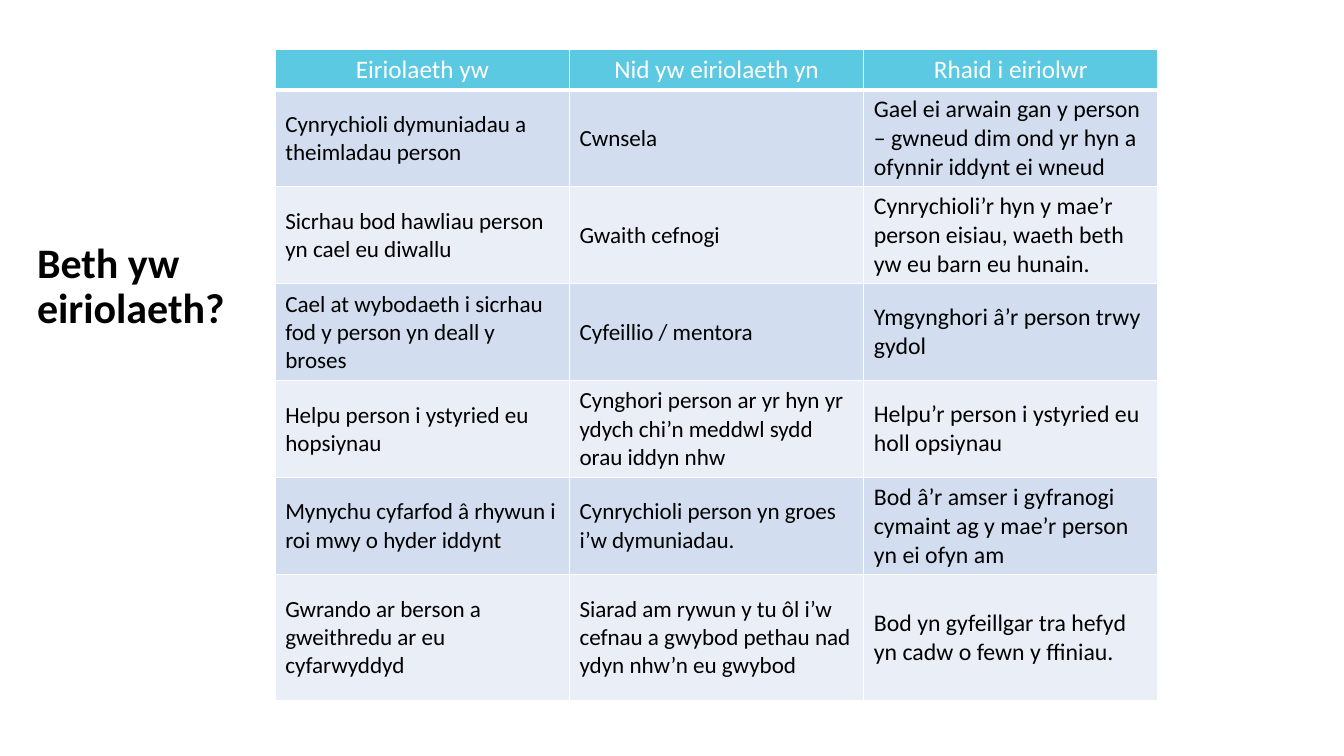
"""Build a slide that explains advocacy in a three-column table."""
from lxml import etree
from pptx import Presentation
from pptx.dml.color import RGBColor
from pptx.enum import text
from pptx.oxml import ns
from pptx.util import Pt

BLACK = RGBColor(0x00, 0x00, 0x00)
WHITE = RGBColor(0xFF, 0xFF, 0xFF)
HEADER_BLUE = RGBColor(0x5C, 0xC9, 0xE3)
BANDS = [RGBColor(0xEA, 0xEF, 0xF7), RGBColor(0xD2, 0xDE, 0xEF)]

ROWS = [
    ["Eiriolaeth yw", "Nid yw eiriolaeth yn", "Rhaid i eiriolwr"],
    ["Cynrychioli dymuniadau a theimladau person", "Cwnsela",
     "Gael ei arwain gan y person – gwneud dim ond yr hyn a ofynnir iddynt ei wneud"],
    ["Sicrhau bod hawliau person yn cael eu diwallu", "Gwaith cefnogi",
     "Cynrychioli’r hyn y mae’r person eisiau, waeth beth yw eu barn eu hunain."],
    ["Cael at wybodaeth i sicrhau fod y person yn deall y broses", "Cyfeillio / mentora",
     "Ymgynghori â’r person trwy gydol"],
    ["Helpu person i ystyried eu hopsiynau",
     "Cynghori person ar yr hyn yr ydych chi’n meddwl sydd orau iddyn nhw",
     "Helpu’r person i ystyried eu holl opsiynau"],
    ["Mynychu cyfarfod â rhywun i roi mwy o hyder iddynt",
     "Cynrychioli person yn groes i’w dymuniadau.",
     "Bod â’r amser i gyfranogi cymaint ag y mae’r person yn ei ofyn am"],
    ["Gwrando ar berson a gweithredu ar eu cyfarwyddyd",
     "Siarad am rywun y tu ôl i’w cefnau a gwybod pethau nad ydyn nhw’n eu gwybod",
     "Bod yn gyfeillgar tra hefyd yn cadw o fewn y ffiniau."],
]
ROW_HEIGHTS = [28.3] + [69.3] * 5 + [90]
COLUMN_WIDTH = 210.2
BODY_SIZES = [16.5, 16.5, 17]


def format_paragraph(paragraph, size, color, bold=False):
    values = {"name": "Calibri", "size": Pt(size), "bold": bold}
    for name, value in values.items():
        setattr(paragraph.font, name, value)
    paragraph.font.color.rgb = color


def add_borders(cell, bottom_width):
    properties = cell._tc.get_or_add_tcPr()
    widths = {"lnL": 1, "lnR": 1, "lnT": 1, "lnB": bottom_width}
    for side, width in widths.items():
        line = etree.SubElement(properties, ns.qn(f"a:{side}"), w=str(Pt(width)))
        fill = etree.SubElement(line, ns.qn("a:solidFill"))
        etree.SubElement(fill, ns.qn("a:srgbClr"), val=str(WHITE))


presentation = Presentation()
presentation.slide_width = Pt(960)
presentation.slide_height = Pt(540)
slide = presentation.slides.add_slide(presentation.slide_layouts[6])

title = slide.shapes.add_textbox(Pt(19.4), Pt(35.3), Pt(164.2), Pt(339.8))
title.text_frame.word_wrap = True
title.text_frame.vertical_anchor = text.MSO_ANCHOR.MIDDLE
title_paragraph = title.text_frame.paragraphs[0]
title_paragraph.text = "Beth yw eiriolaeth?"
title_paragraph.line_spacing = 0.9
format_paragraph(title_paragraph, 30, BLACK, bold=True)

table = slide.shapes.add_table(
    len(ROWS), len(BODY_SIZES), Pt(196.6), Pt(35.3),
    Pt(COLUMN_WIDTH * len(BODY_SIZES)), Pt(sum(ROW_HEIGHTS))).table
for column in table.columns:
    column.width = Pt(COLUMN_WIDTH)

for row_index, (labels, height) in enumerate(zip(ROWS, ROW_HEIGHTS)):
    table.rows[row_index].height = Pt(height)
    is_header = row_index == 0
    for column_index, label in enumerate(labels):
        cell = table.cell(row_index, column_index)
        cell.text = label
        add_borders(cell, 3 if is_header else 1)
        cell.fill.solid()
        cell.fill.fore_color.rgb = HEADER_BLUE if is_header else BANDS[row_index % 2]
        paragraph = cell.text_frame.paragraphs[0]
        if is_header:
            paragraph.alignment = text.PP_ALIGN.CENTER
            format_paragraph(paragraph, 18, WHITE)
        else:
            cell.vertical_anchor = text.MSO_ANCHOR.MIDDLE
            format_paragraph(paragraph, BODY_SIZES[column_index], BLACK)

presentation.save("out.pptx")
